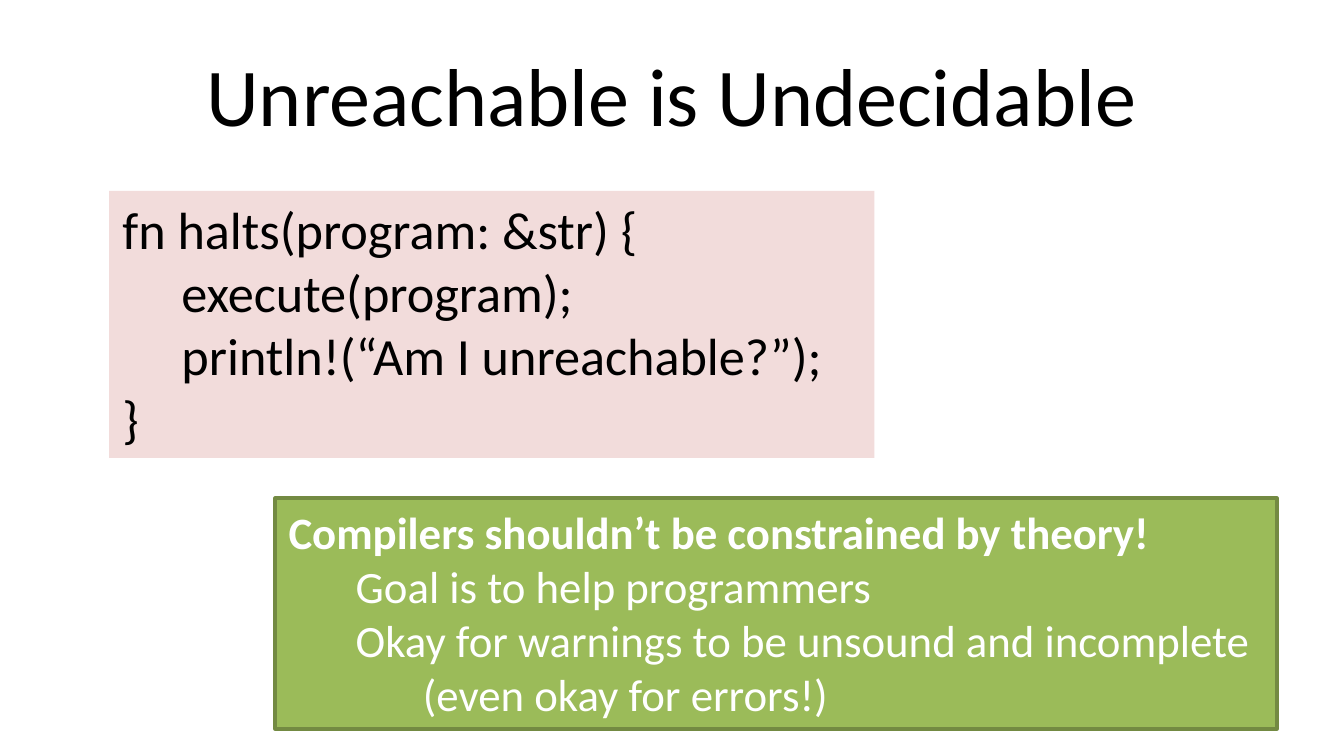
from pptx import Presentation
from pptx.dml.color import RGBColor
from pptx.enum import shapes, text
from pptx.util import Pt

FONT = "Calibri"
INDENT = 36


def rgb(hex_color):
    return RGBColor.from_string(hex_color)


def style(p, size, color, bold=False):
    for r in p.runs:
        r.font.name = FONT
        r.font.size = Pt(size)
        r.font.bold = bold
        r.font.color.rgb = rgb(color)


def add_title(slide, box, title):
    sp = slide.shapes.title
    sp.left, sp.top, sp.width, sp.height = map(Pt, box)
    tf = sp.text_frame
    tf.text = title
    tf.vertical_anchor = text.MSO_ANCHOR.MIDDLE
    p = tf.paragraphs[0]
    p.alignment = text.PP_ALIGN.CENTER
    style(p, 44, "000000")


def add_panel(slide, box, fill, lines, size, color, border=None):
    """Filled rectangle with left-aligned lines of (text, indent level, bold)."""
    sp = slide.shapes.add_shape(shapes.MSO_SHAPE.RECTANGLE, *map(Pt, box))
    sp.shadow.inherit = False
    sp.fill.solid()
    sp.fill.fore_color.rgb = rgb(fill)
    if border:
        sp.line.color.rgb = rgb(border)
        sp.line.width = Pt(2)
    else:
        sp.line.fill.background()
    tf = sp.text_frame
    tf.word_wrap = True
    tf.vertical_anchor = text.MSO_ANCHOR.TOP
    for i, (line, level, bold) in enumerate(lines):
        p = tf.paragraphs[0] if i == 0 else tf.add_paragraph()
        p.text = line
        p.alignment = text.PP_ALIGN.LEFT
        if level:
            p._p.get_or_add_pPr().set("marL", str(Pt(level * INDENT)))
        style(p, size, color, bold)


def add_code(slide, box, code):
    lines = [(line, 0, False) for line in code]
    add_panel(slide, box, "F2DCDB", lines, 28, "000000")


def add_takeaway(slide, box, lines):
    add_panel(slide, box, "9BBB59", lines, 24, "FFFFFF", border="738A42")


def main():
    prs = Presentation()
    prs.slide_width, prs.slide_height = Pt(720), Pt(405)
    slide = prs.slides.add_slide(prs.slide_layouts[5])

    add_title(slide, (36, 16.2, 648, 67.5), "Unreachable is Undecidable")
    add_code(slide, (58.5, 102.3, 410, 143), [
        "fn halts(program: &str) {",
        "     execute(program);",
        "     println!(“Am I unreachable?”);",
        "}",
    ])
    add_takeaway(slide, (147.5, 267, 536.5, 123.6), [
        ("Compilers shouldn’t be constrained by theory!", 0, True),
        ("Goal is to help programmers", 1, False),
        ("Okay for warnings to be unsound and incomplete", 1, False),
        ("(even okay for errors!)", 2, False),
    ])
    prs.save("out.pptx")


if __name__ == "__main__":
    main()
